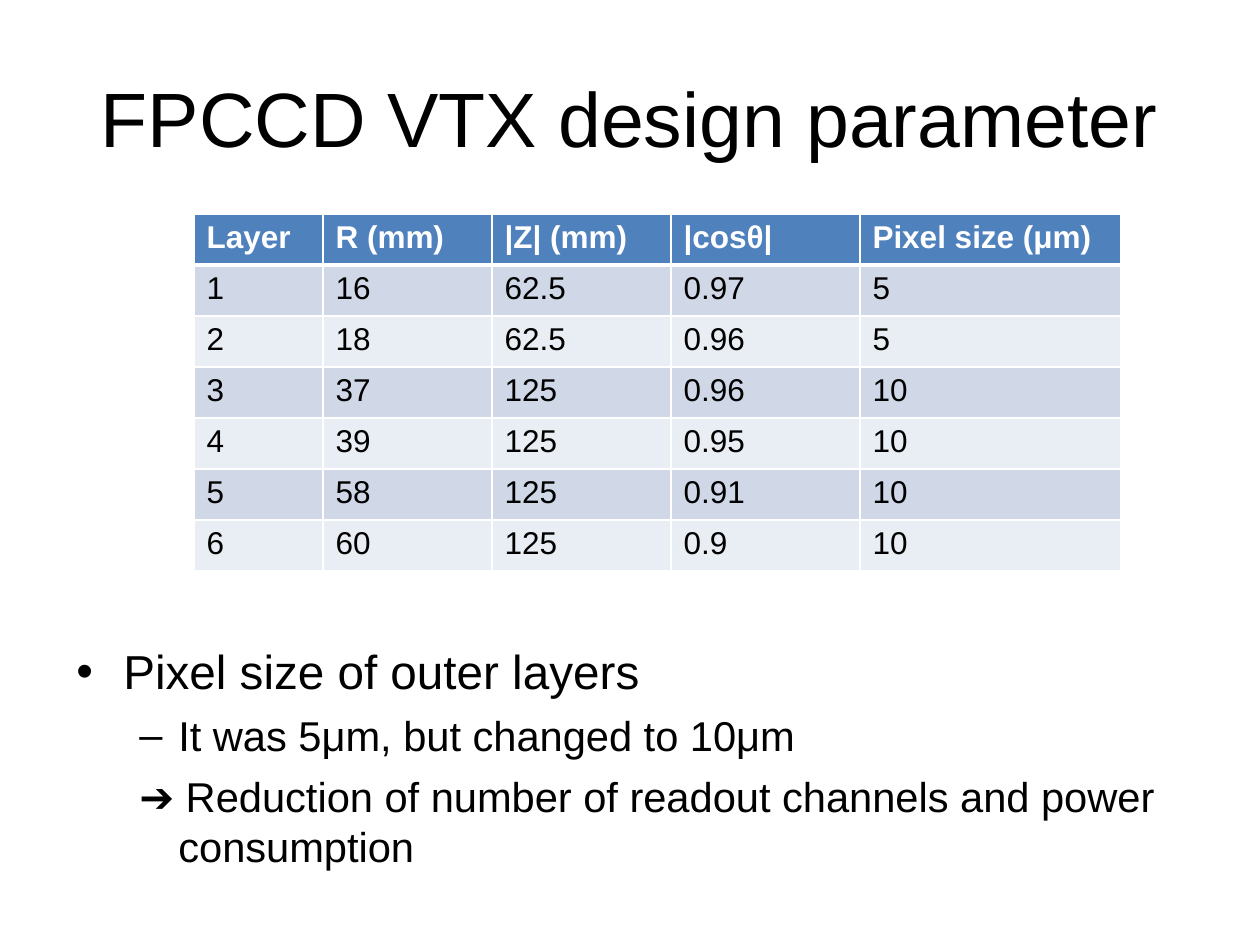
from dataclasses import dataclass

from lxml import etree
from pptx import Presentation
from pptx import util as u
from pptx.dml import color
from pptx.enum import text
from pptx.oxml import ns


@dataclass(frozen=True)
class Theme:
    """Colours, font and type sizes of the slide."""
    font: str = "Arial"
    ink: str = "000000"
    paper: str = "FFFFFF"
    header: str = "4F81BD"
    bands: tuple = ("D0D8E8", "E9EDF4")
    title_size: float = 44
    table_size: float = 18
    level_sizes: tuple = (27.2, 23.8)


THEME = Theme()
PX_PER_INCH = 126
TITLE = "FPCCD VTX design parameter"
COLUMN_WIDTHS = (129, 169, 179, 189, 261)
LAYERS = (
    ("Layer", "R (mm)", "|Z| (mm)", "|cosθ|", "Pixel size (μm)"),
    ("1", "16", "62.5", "0.97", "5"),
    ("2", "18", "62.5", "0.96", "5"),
    ("3", "37", "125", "0.96", "10"),
    ("4", "39", "125", "0.95", "10"),
    ("5", "58", "125", "0.91", "10"),
    ("6", "60", "125", "0.9", "10"),
)
POINTS = (
    (0, "•", "Pixel size of outer layers"),
    (1, "–", "It was 5μm, but changed to 10μm"),
    (1, None, "➔ Reduction of number of readout channels and power consumption"),
)
INDENTS = ((47, -47), (102, -39))


def px(length):
    """Turn pixels into EMU."""
    return u.Emu(round(length * 914400 / PX_PER_INCH))


def style(paragraph, size, ink=THEME.ink, bold=False):
    """Format the runs of a paragraph."""
    for run in paragraph.runs:
        run.font.name = THEME.font
        run.font.size = u.Pt(size)
        run.font.bold = bold
        run.font.color.rgb = color.RGBColor.from_string(ink)


def add_frame(slide, box, anchor):
    """Add a wrapping text box and return its text frame."""
    frame = slide.shapes.add_textbox(*map(px, box)).text_frame
    frame.word_wrap = True
    frame.vertical_anchor = anchor
    return frame


def add_title(slide, box):
    """Place the centred title."""
    heading = add_frame(slide, box, text.MSO_ANCHOR.MIDDLE).paragraphs[0]
    heading.text = TITLE
    heading.alignment = text.PP_ALIGN.CENTER
    style(heading, THEME.title_size)


def set_borders(cell, top, bottom):
    """Rule the cell in paper colour, with widths in points."""
    properties = cell._tc.get_or_add_tcPr()
    for side, width in (("L", 1), ("R", 1), ("T", top), ("B", bottom)):
        rule = etree.SubElement(properties, ns.qn(f"a:ln{side}"), w=str(u.Pt(width)))
        fill = etree.SubElement(rule, ns.qn("a:solidFill"))
        etree.SubElement(fill, ns.qn("a:srgbClr"), val=THEME.paper)


def add_layer_table(slide, box):
    """Place the table of layer parameters."""
    table = slide.shapes.add_table(len(LAYERS), len(COLUMN_WIDTHS), *map(px, box)).table
    for column, width in zip(table.columns, COLUMN_WIDTHS):
        column.width = px(width)
    for r, values in enumerate(LAYERS):
        table.rows[r].height = px(box[3] / len(LAYERS))
        is_header = r == 0
        fill = THEME.header if is_header else THEME.bands[(r - 1) % 2]
        ink = THEME.paper if is_header else THEME.ink
        for c, value in enumerate(values):
            cell = table.cell(r, c)
            set_borders(cell, top=3 if r == 1 else 1, bottom=3 if is_header else 1)
            cell.fill.solid()
            cell.fill.fore_color.rgb = color.RGBColor.from_string(fill)
            cell.text = value
            style(cell.text_frame.paragraphs[0], THEME.table_size, ink, is_header)


def set_bullet(paragraph, level, bullet):
    """Give a paragraph its hanging indent and bullet."""
    properties = paragraph._p.get_or_add_pPr()
    margin, indent = INDENTS[level]
    properties.set("marL", str(px(margin)))
    properties.set("indent", str(px(indent)))
    if bullet:
        etree.SubElement(properties, ns.qn("a:buFont"), typeface=THEME.font)
        etree.SubElement(properties, ns.qn("a:buChar"), char=bullet)
    else:
        etree.SubElement(properties, ns.qn("a:buNone"))


def add_points(slide, box):
    """Place the bulleted remarks on pixel size."""
    frame = add_frame(slide, box, text.MSO_ANCHOR.TOP)
    for i, (level, bullet, remark) in enumerate(POINTS):
        point = frame.add_paragraph() if i else frame.paragraphs[0]
        point.text = remark
        point.level = level
        set_bullet(point, level, bullet)
        point.space_before = u.Pt(6 if i else 0)
        style(point, THEME.level_sizes[level])


def main():
    """Build and save the slide."""
    deck = Presentation()
    deck.slide_width, deck.slide_height = px(1260), px(945)
    slide = deck.slides.add_slide(deck.slide_layouts[6])
    add_title(slide, (63, 38, 1134, 158))
    add_points(slide, (64, 636, 1134, 208))
    add_layer_table(slide, (194, 214, sum(COLUMN_WIDTHS), 357))
    deck.save("out.pptx")


if __name__ == "__main__":
    main()
